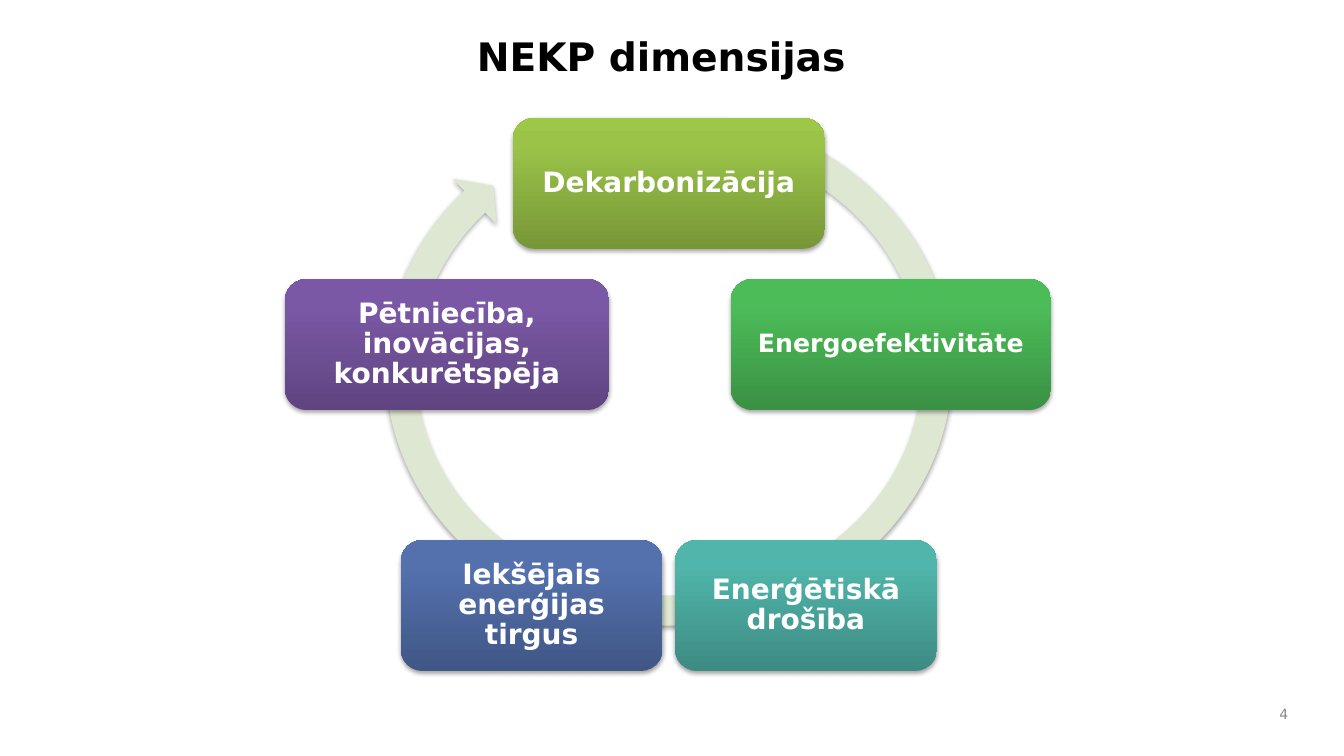
from math import cos, radians, sin

from lxml import etree
from pptx import Presentation
from pptx.dml.color import RGBColor
from pptx.enum.shapes import MSO_SHAPE
from pptx.enum.text import MSO_ANCHOR, MSO_AUTO_SIZE, PP_ALIGN
from pptx.util import Pt

ROUND, ARROW = MSO_SHAPE.ROUNDED_RECTANGLE, MSO_SHAPE.CIRCULAR_ARROW
TOP, MIDDLE = MSO_ANCHOR.TOP, MSO_ANCHOR.MIDDLE
LEFT, CENTER, RIGHT = PP_ALIGN.LEFT, PP_ALIGN.CENTER, PP_ALIGN.RIGHT
NONE = MSO_AUTO_SIZE.NONE
FONT = "DejaVu Sans"
NS = "http://schemas.openxmlformats.org/drawingml/2006/main"

HEX = {"title": "000000", "label": "FFFFFF", "number": "898989",
       "ring": "DEE7D1", "shadow": "000000"}

# Gradient stops run from the bottom edge to the top edge
STOPS = (0, 80, 100)

# Clockwise from the top: text, width, size, gradient colours
CARDS = [
    ("Dekarbonizācija", 223.2, 20, ("779737", "9BC348", "9DC746")),
    ("Energoefektivitāte", 229, 18, ("3A9144", "4CBC58", "4ABF57")),
    ("Enerģētiskā drošība", 187.2, 20, ("3D8B83", "50B5AA", "4EB8AC")),
    ("Iekšējais enerģijas tirgus", 187.2, 20,
     ("405786", "5471AE", "5271B0")),
    ("Pētniecība, inovācijas, konkurētspēja", 231.8, 20,
     ("5F4480", "7B58A6", "7C57A8")),
]
CARD_H = 93.6
ADJUST = (0.055, 3.307, 132.406, 177.211, 0.058)


def apply(item, values):
    for key, value in values.items():
        setattr(item, key, value)


def write(shape, text, size, color, align, anchor, pad, bold=False, gap=1.0):
    frame = shape.text_frame
    side, edge = pad
    apply(frame, {"text": text, "word_wrap": True, "auto_size": NONE,
                  "vertical_anchor": anchor,
                  "margin_left": Pt(side), "margin_right": Pt(side),
                  "margin_top": Pt(edge), "margin_bottom": Pt(edge)})
    para = frame.paragraphs[0]
    apply(para, {"alignment": align, "line_spacing": gap,
                 "space_before": Pt(0)})
    font = para.runs[0].font
    apply(font, {"name": FONT, "size": Pt(size), "bold": bold})
    font.color.rgb = RGBColor.from_string(HEX[color])


def blend(shape, colors):
    stops = "".join(
        f'<a:gs pos="{pos * 1000}"><a:srgbClr val="{color}"/></a:gs>'
        for pos, color in zip(STOPS, colors))
    shape.element.spPr.append(etree.fromstring(
        f'<a:gradFill xmlns:a="{NS}" rotWithShape="1"><a:gsLst>{stops}'
        '</a:gsLst><a:lin ang="16200000" scaled="0"/></a:gradFill>'))


def shade(shape):
    """Remove the outline and add a soft shadow straight below."""
    shape.line.fill.background()
    shape.element.spPr.append(etree.fromstring(
        f'<a:effectLst xmlns:a="{NS}"><a:outerShdw blurRad="{Pt(3.1)}" '
        f'dist="{Pt(1.8)}" dir="5400000" rotWithShape="0">'
        f'<a:srgbClr val="{HEX["shadow"]}"><a:alpha val="35000"/>'
        '</a:srgbClr></a:outerShdw></a:effectLst>'))


def head(slide, x, y, w, h):
    title = slide.shapes.title
    apply(title, {"left": Pt(x), "top": Pt(y),
                  "width": Pt(w), "height": Pt(h)})
    write(title, "NEKP dimensijas", 28, "title", LEFT, TOP, (7.2, 3.6), True)


def cycle(slide, x, y, w, h):
    # Ring behind the cards
    ring = slide.shapes.add_shape(ARROW, Pt(x), Pt(y), Pt(w), Pt(h))
    for i, value in enumerate(ADJUST):
        ring.adjustments[i] = value
    ring.fill.solid()
    ring.fill.fore_color.rgb = RGBColor.from_string(HEX["ring"])
    shade(ring)

    # Cards at the corners of a regular pentagon
    mid_x, mid_y, radius = x + w / 2, y + h / 2 + 34.4, 166.7
    for i, (text, wide, size, colors) in enumerate(CARDS):
        turn = radians(i * 360 / len(CARDS))
        left = mid_x + radius * sin(turn) - wide / 2
        top = mid_y - radius * cos(turn) - CARD_H / 2
        card = slide.shapes.add_shape(ROUND, Pt(left), Pt(top),
                                      Pt(wide), Pt(CARD_H))
        blend(card, colors)
        shade(card)
        pad = size * 0.3
        write(card, text, size, "label", CENTER, MIDDLE, (pad, pad),
              True, 0.9)


def number(slide, x, y, w, h):
    box = slide.shapes.add_textbox(Pt(x), Pt(y), Pt(w), Pt(h))
    write(box, "4", 10, "number", RIGHT, MIDDLE, (7.2, 3.6))


def main():
    deck = Presentation()
    apply(deck, {"slide_width": Pt(960), "slide_height": Pt(540)})
    slide = deck.slides.add_slide(deck.slide_layouts[5])
    head(slide, 333.4, 19.4, 640, 81.4)
    cycle(slide, 263.6, 67.8, 428.4, 391)
    number(slide, 895.7, 498.2, 31.7, 23.8)
    deck.save("out.pptx")


if __name__ == "__main__":
    main()
